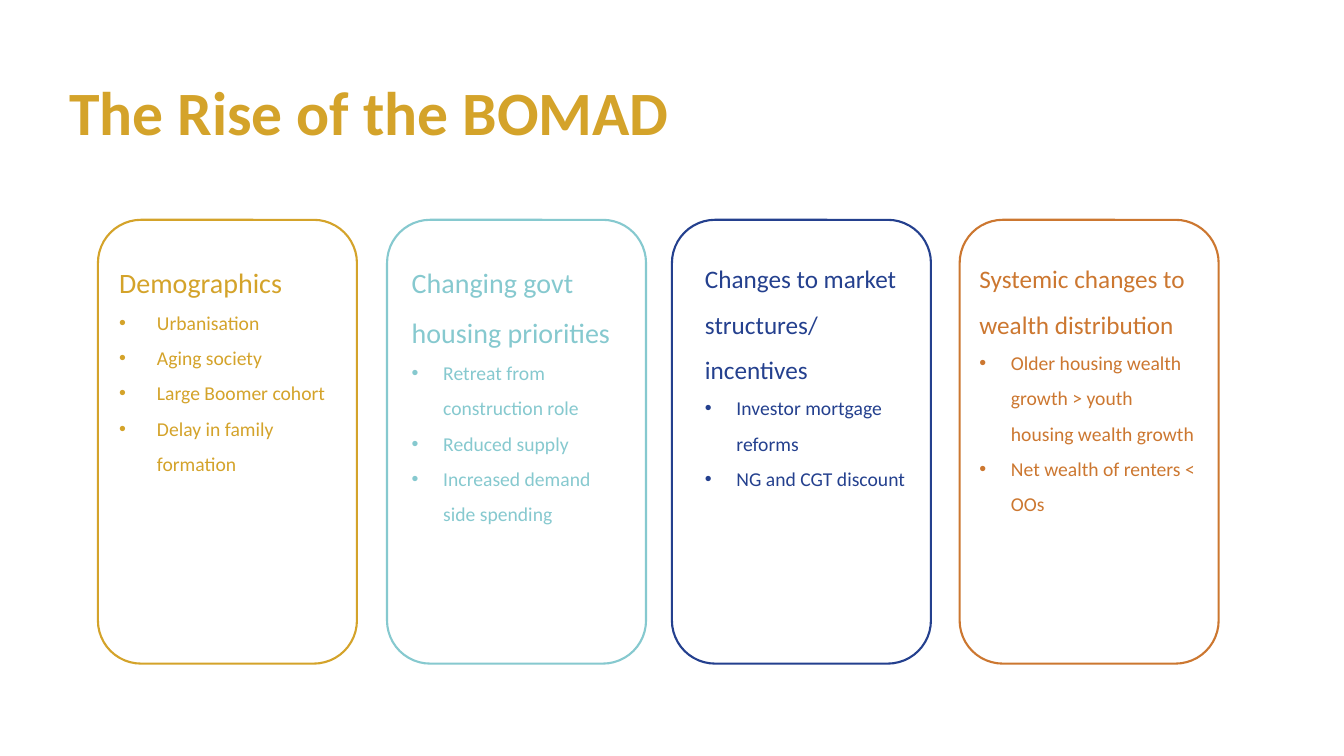
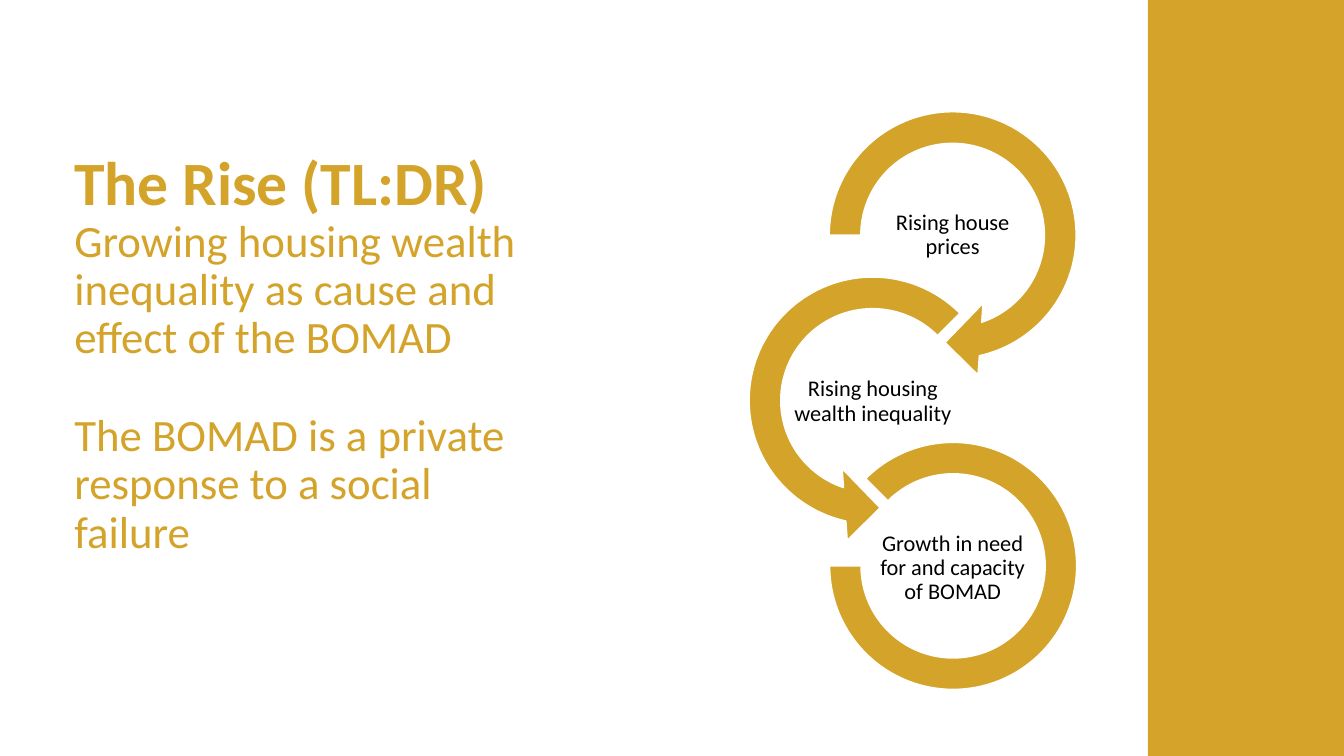
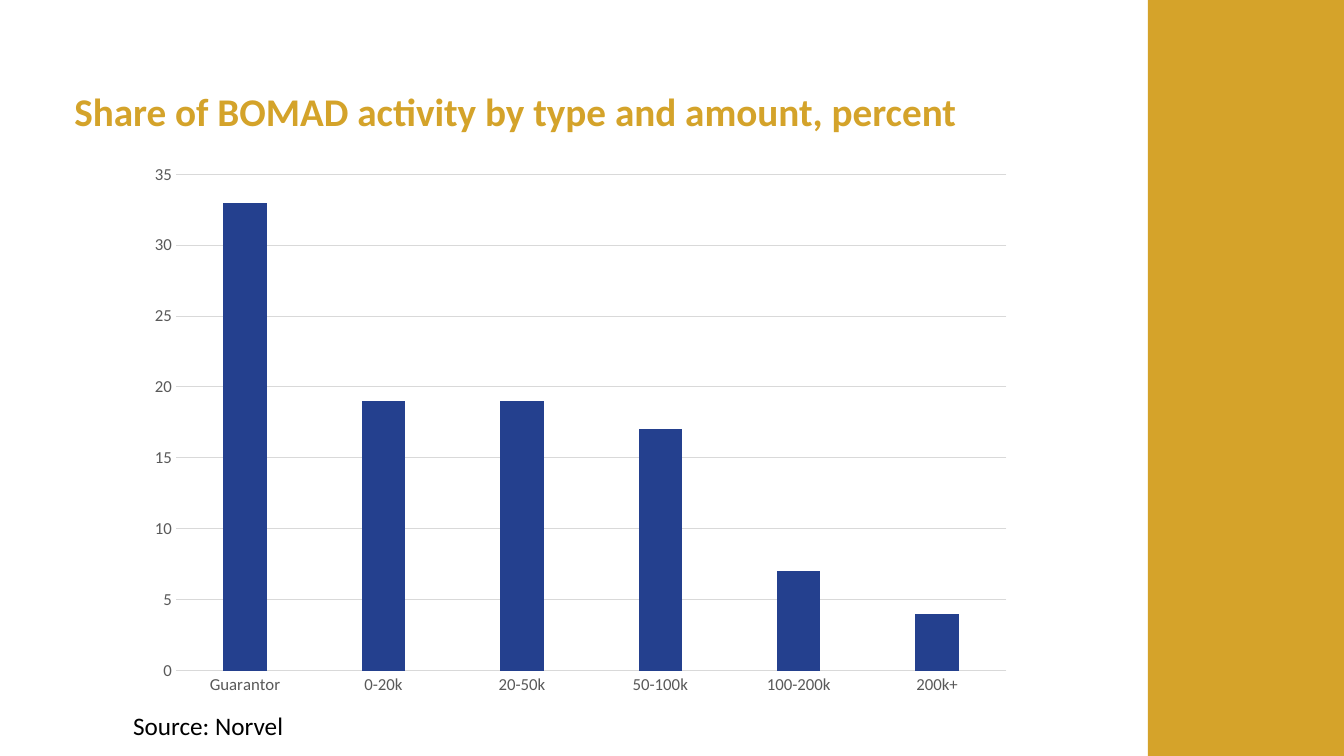
import lxml.etree
import pptx
import pptx.chart.data
import pptx.dml.color
import pptx.enum.chart
import pptx.enum.shapes
import pptx.enum.text
import pptx.oxml.ns
import pptx.util

Pt = pptx.util.Pt
SHAPE = pptx.enum.shapes.MSO_SHAPE
ALIGN = pptx.enum.text.PP_ALIGN
ANCHOR = pptx.enum.text.MSO_ANCHOR
FONT = "Calibri"
COLOURS = {
    "gold": "D4A32A", "band": "D5A32A", "teal": "86C9CF", "navy": "24408E",
    "rust": "CC7730", "black": "000000", "white": "FFFFFF",
    "grey": "595959", "grid": "D9D9D9",
}


def rgb(name):
    return pptx.dml.color.RGBColor.from_string(COLOURS[name])


class Deck:
    """Holds the style and the slide being built."""

    def __init__(self):
        self.presentation = pptx.Presentation()
        self.presentation.slide_width = Pt(960)
        self.presentation.slide_height = Pt(540)
        self.slide = None

    def new_slide(self, band=False):
        self.slide = self.presentation.slides.add_slide(self.presentation.slide_layouts[6])
        if band:
            self.shape(SHAPE.RECTANGLE, (820, 0, 140, 540), fill="band")

    def shape(self, kind, box, fill=None, line=None, width=1, adjustments=()):
        shape = self.slide.shapes.add_shape(kind, *map(Pt, box))
        shape.shadow.inherit = False
        for index, value in enumerate(adjustments):
            shape.adjustments[index] = value
        if fill:
            shape.fill.solid()
            shape.fill.fore_color.rgb = rgb(fill)
        else:
            shape.fill.background()
        if line:
            shape.line.color.rgb = rgb(line)
            shape.line.width = Pt(width)
        else:
            shape.line.fill.background()

    def text_box(self, box, anchor=ANCHOR.TOP, inset=None):
        frame = self.slide.shapes.add_textbox(*map(Pt, box)).text_frame
        frame.word_wrap = True
        frame.vertical_anchor = anchor
        if inset is not None:
            frame.margin_left = frame.margin_right = Pt(inset)
            frame.margin_top = frame.margin_bottom = Pt(inset)
        return frame

    def paragraph(self, frame, text, size, colour, bold=False, spacing=1.0,
                  before=0, align=ALIGN.LEFT, bullet_indent=0):
        first = frame.paragraphs[0]
        paragraph = frame.add_paragraph() if first.runs else first
        paragraph.alignment = align
        paragraph.line_spacing = spacing
        paragraph.space_before = Pt(before)
        run = paragraph.add_run()
        run.text = text
        run.font.name = FONT
        run.font.size = Pt(size)
        run.font.bold = bold
        run.font.color.rgb = rgb(colour)
        if bullet_indent:
            self.bullet(paragraph, bullet_indent)

    def bullet(self, paragraph, indent):
        properties = paragraph._p.get_or_add_pPr()
        properties.set("marL", str(Pt(indent)))
        properties.set("indent", str(-Pt(indent)))
        for tag, key, value in (("a:buFont", "typeface", "Arial"), ("a:buChar", "char", "•")):
            lxml.etree.SubElement(properties, pptx.oxml.ns.qn(tag)).set(key, value)

    def title(self, box, text, size=44):
        frame = self.text_box(box, ANCHOR.MIDDLE)
        self.paragraph(frame, text, size, "gold", bold=True, spacing=0.9)
        return frame

    def column_chart(self, box, categories, values):
        data = pptx.chart.data.CategoryChartData()
        data.categories = categories
        data.add_series("Series 1", values)
        kind = pptx.enum.chart.XL_CHART_TYPE.COLUMN_CLUSTERED
        chart = self.slide.shapes.add_chart(kind, *map(Pt, box), data).chart
        chart.has_legend = chart.has_title = False
        chart.font.name = FONT
        chart.font.size = Pt(12)
        chart.font.color.rgb = rgb("grey")

        # Columns
        plot = chart.plots[0]
        plot.gap_width, plot.overlap = 219, -27
        plot.vary_by_categories = False
        columns = plot.series[0].format.fill
        columns.solid()
        columns.fore_color.rgb = rgb("navy")

        # Axes
        for axis in (chart.category_axis, chart.value_axis):
            axis.major_tick_mark = axis.minor_tick_mark = pptx.enum.chart.XL_TICK_MARK.NONE
        chart.value_axis.minimum_scale = 0
        chart.value_axis.maximum_scale = 35
        chart.value_axis.major_unit = 5
        chart.value_axis.format.line.fill.background()
        for line in (chart.category_axis.format.line, chart.value_axis.major_gridlines.format.line):
            line.color.rgb = rgb("grid")
            line.width = Pt(0.75)


def causes_slide(deck):
    deck.new_slide()
    deck.title((42.5, 30, 828, 104.5), "The Rise of the BOMAD")
    # Colour, card left, text left, text width, heading size, indent, headings, points
    causes = [
        ("gold", 70, 78, 168, 20, 27, ["Demographics"],
         ["Urbanisation", "Aging society", "Large Boomer cohort", "Delay in family formation"]),
        ("teal", 276.5, 287, 168, 20, 22.5, ["Changing govt housing priorities"],
         ["Retreat from construction role", "Reduced supply", "Increased demand side spending"]),
        ("navy", 480, 496.5, 160, 18, 22.5, ["Changes to market structures/", "incentives"],
         ["Investor mortgage reforms", "NG and CGT discount"]),
        ("rust", 685.5, 692.5, 171, 18, 22.5, ["Systemic changes to wealth distribution"],
         ["Older housing wealth growth > youth housing wealth growth",
          "Net wealth of renters < OOs"]),
    ]
    for colour, card_left, left, width, size, indent, headings, points in causes:
        deck.shape(SHAPE.ROUNDED_RECTANGLE, (card_left, 157, 185, 317), line=colour, width=1.5)
        cause = deck.text_box((left, 174, width, 265))
        for heading in headings:
            deck.paragraph(cause, heading, size, colour, spacing=1.5)
        for point in points:
            deck.paragraph(cause, point, 14, colour, spacing=1.5, bullet_indent=indent)


def summary_slide(deck):
    deck.new_slide(band=True)
    summary = deck.title((46, 46, 340, 415), "The Rise (TL:DR)")
    deck.paragraph(summary, "Growing housing wealth inequality as cause and effect of the BOMAD",
                   32, "gold", spacing=0.9)
    deck.paragraph(summary, "The BOMAD is a private response to a social failure",
                   32, "gold", spacing=0.9, before=35)

    # Chain of arrows, each with its label
    steps = [
        (SHAPE.CIRCULAR_ARROW, (578, 65.5, 205, 205), (0.11, 11.42, 45, 108, 0.125),
         623.5, "Rising house prices"),
        (SHAPE.LEFT_CIRCULAR_ARROW, (520.8, 183.6, 205, 205), (0.11, 11.42, 63, 189, 0.125),
         566.5, "Rising housing wealth inequality"),
        (SHAPE.BLOCK_ARC, (592.6, 316, 176.4, 176.4), (135, 108, 0.127),
         623.5, "Growth in need for and capacity of BOMAD"),
    ]
    for index, (kind, box, adjustments, label_left, label) in enumerate(steps):
        deck.shape(kind, box, fill="gold", line="white", adjustments=adjustments)
        frame = deck.text_box((label_left, 139.7 + index * 118.8, 114, 57), ANCHOR.MIDDLE, inset=0.8)
        deck.paragraph(frame, label, 16, "black", spacing=0.9, align=ALIGN.CENTER)


def share_slide(deck):
    deck.new_slide(band=True)
    deck.column_chart((98, 109.5, 633.5, 394.5),
                      ["Guarantor", "0-20k", "20-50k", "50-100k", "100-200k", "200k+"],
                      [33, 19, 19, 17, 7, 4])
    deck.title((46, 46, 729, 70), "Share of BOMAD activity by type and amount, percent", size=28)
    source = deck.text_box((88, 504, 346, 29))
    deck.paragraph(source, "Source: Norvel", 18, "black")


def main():
    deck = Deck()
    causes_slide(deck)
    summary_slide(deck)
    share_slide(deck)
    deck.presentation.save("out.pptx")


if __name__ == "__main__":
    main()
